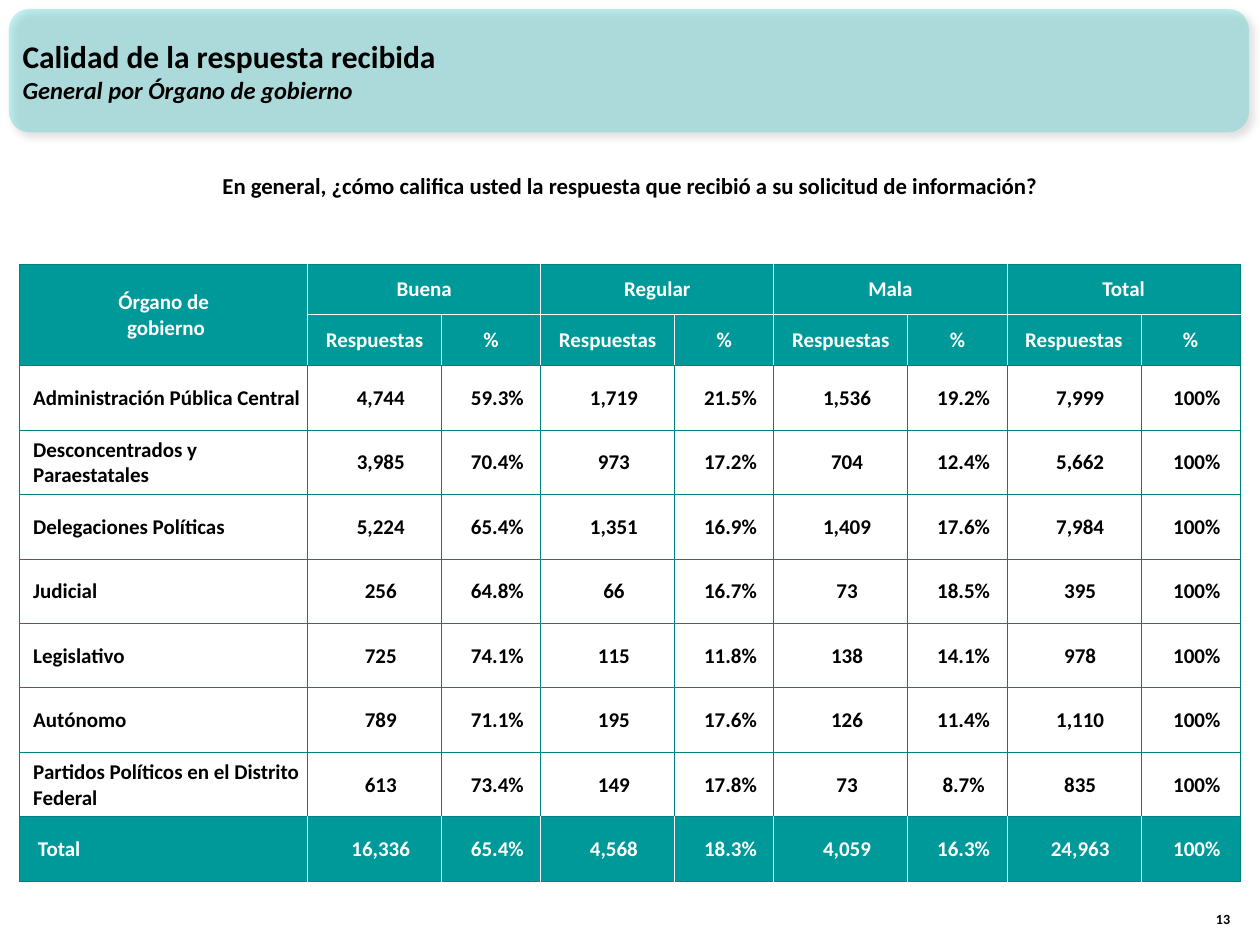
from lxml import etree
from pptx import Presentation
from pptx import util as u
from pptx.dml.color import RGBColor
from pptx.enum import shapes, text
from pptx.oxml import ns, parse_xml

BLACK = RGBColor(0x00, 0x00, 0x00)
WHITE = RGBColor(0xFF, 0xFF, 0xFF)
AQUA = RGBColor(0x33, 0xCC, 0xCC)
TEAL = RGBColor(0x00, 0x99, 0x99)
DARK_TEAL = RGBColor(0x00, 0x80, 0x80)

FONT = "Calibri"
LEFT, CENTER, RIGHT = text.PP_ALIGN.LEFT, text.PP_ALIGN.CENTER, text.PP_ALIGN.RIGHT
MIDDLE, BOTTOM = text.MSO_ANCHOR.MIDDLE, text.MSO_ANCHOR.BOTTOM

TITLE = "Calidad de la respuesta recibida"
SUBTITLE = "General por Órgano de gobierno"
QUESTION = "En general, ¿cómo califica usted la respuesta que recibió a su solicitud de información?"

RATINGS = ["Buena", "Regular", "Mala", "Total"]
ROWS = [
    ["Administración Pública Central", "4,744", "59.3%", "1,719", "21.5%", "1,536", "19.2%", "7,999", "100%"],
    ["Desconcentrados y Paraestatales", "3,985", "70.4%", "973", "17.2%", "704", "12.4%", "5,662", "100%"],
    ["Delegaciones Políticas", "5,224", "65.4%", "1,351", "16.9%", "1,409", "17.6%", "7,984", "100%"],
    ["Judicial", "256", "64.8%", "66", "16.7%", "73", "18.5%", "395", "100%"],
    ["Legislativo", "725", "74.1%", "115", "11.8%", "138", "14.1%", "978", "100%"],
    ["Autónomo", "789", "71.1%", "195", "17.6%", "126", "11.4%", "1,110", "100%"],
    ["Partidos Políticos en el Distrito Federal", "613", "73.4%", "149", "17.8%", "73", "8.7%", "835", "100%"],
    [" Total", "16,336", "65.4%", "4,568", "18.3%", "4,059", "16.3%", "24,963", "100%"],
]
HEADER_ROWS = 2
COLUMN_WIDTHS = [5.8] + [2.7, 2.0] * len(RATINGS)
ROW_HEIGHTS = [1.0, 1.03] + [1.3] * len(ROWS)


def write_paragraph(paragraph, content, size, color=BLACK, align=LEFT, italic=False, indent=0):
    paragraph.alignment = align
    if indent:
        paragraph._p.get_or_add_pPr().set("marL", str(u.Cm(indent)))
    run = paragraph.add_run()
    run.text = content
    font = run.font
    font.name, font.size, font.bold, font.italic = FONT, u.Pt(size), True, italic
    font.color.rgb = color


def add_band(slide):
    band = slide.shapes.add_shape(
        shapes.MSO_SHAPE.ROUNDED_RECTANGLE, u.Cm(0.18), u.Cm(0.18), u.Cm(25), u.Cm(2.49))
    band.fill.solid()
    band.fill.fore_color.rgb = AQUA
    band.line.fill.background()
    color = band._element.spPr.find(".//" + ns.qn("a:srgbClr"))
    etree.SubElement(color, ns.qn("a:alpha"), val="30000")
    band._element.spPr.append(parse_xml(
        f'<a:effectLst {ns.nsdecls("a")}><a:outerShdw blurRad="{u.Pt(4)}" dist="{u.Pt(3)}" '
        f'dir="2700000" algn="tl" rotWithShape="0"><a:srgbClr val="{BLACK}">'
        '<a:alpha val="40000"/></a:srgbClr></a:outerShdw></a:effectLst>'))
    slide.shapes.title._element.addprevious(band._element)


def fill_title(slide):
    title = slide.shapes.title
    title.left, title.top, title.width, title.height = u.Cm(0.2), u.Cm(0.23), u.Cm(23.3), u.Cm(2.38)
    frame = title.text_frame
    frame.auto_size = text.MSO_AUTO_SIZE.NONE
    frame.vertical_anchor = MIDDLE
    write_paragraph(frame.paragraphs[0], TITLE, 18)
    write_paragraph(frame.add_paragraph(), SUBTITLE, 14, italic=True)


def add_label(slide, content, left, top, width, height, anchor=MIDDLE, **style):
    box = slide.shapes.add_textbox(u.Cm(left), u.Cm(top), u.Cm(width), u.Cm(height))
    box.text_frame.word_wrap = True
    box.text_frame.vertical_anchor = anchor
    write_paragraph(box.text_frame.paragraphs[0], content, **style)


def set_border(cell, side, color):
    cell._tc.get_or_add_tcPr().append(parse_xml(
        f'<a:ln{side} {ns.nsdecls("a")} w="{u.Pt(0.5)}"><a:solidFill>'
        f'<a:srgbClr val="{color}"/></a:solidFill></a:ln{side}>'))


def style_cell(cell, row, column):
    filled = row < HEADER_ROWS or row == len(ROW_HEIGHTS) - 1
    last_column = column + cell.span_width
    last_row = row + cell.span_height
    inner_edges = {
        "L": filled and column > 0,
        "R": filled and last_column < len(COLUMN_WIDTHS),
        "T": 0 < row < HEADER_ROWS,
        "B": last_row < HEADER_ROWS,
    }
    for side, inner in inner_edges.items():
        set_border(cell, side, WHITE if inner else DARK_TEAL)
    if filled:
        cell.fill.solid()
        cell.fill.fore_color.rgb = TEAL
    else:
        cell.fill.background()
    cell.vertical_anchor = MIDDLE
    cell.margin_left = cell.margin_top = cell.margin_right = u.Cm(0.02)
    cell.margin_bottom = 0


def write_cell(cell, lines, **style):
    frame = cell.text_frame
    for index, line in enumerate(lines):
        paragraph = frame.add_paragraph() if index else frame.paragraphs[0]
        write_paragraph(paragraph, line, 12, **style)


def add_ratings_table(slide):
    table = slide.shapes.add_table(
        len(ROW_HEIGHTS), len(COLUMN_WIDTHS), u.Cm(0.4), u.Cm(5.33),
        u.Cm(sum(COLUMN_WIDTHS)), u.Cm(sum(ROW_HEIGHTS))).table
    table.first_row = table.horz_banding = False
    for column, width in zip(table.columns, COLUMN_WIDTHS):
        column.width = u.Cm(width)
    for row, height in zip(table.rows, ROW_HEIGHTS):
        row.height = u.Cm(height)

    table.cell(0, 0).merge(table.cell(1, 0))
    for column in range(1, len(COLUMN_WIDTHS), 2):
        table.cell(0, column).merge(table.cell(0, column + 1))
    for row in range(len(ROW_HEIGHTS)):
        for column in range(len(COLUMN_WIDTHS)):
            style_cell(table.cell(row, column), row, column)

    header = {"color": WHITE, "align": CENTER}
    write_cell(table.cell(0, 0), ["Órgano de", " gobierno"], **header)
    for index, rating in enumerate(RATINGS):
        column = 1 + 2 * index
        write_cell(table.cell(0, column), [rating], **header)
        write_cell(table.cell(1, column), ["Respuestas"], **header)
        write_cell(table.cell(1, column + 1), ["%"], **header)
    for row, values in enumerate(ROWS, HEADER_ROWS):
        color = WHITE if row == len(ROW_HEIGHTS) - 1 else BLACK
        for column, value in enumerate(values):
            write_cell(table.cell(row, column), [value], color=color,
                       align=CENTER if column else LEFT, indent=0.25)


def main():
    presentation = Presentation()
    presentation.slide_width, presentation.slide_height = u.Cm(25.4), u.Cm(19.05)
    slide = presentation.slides.add_slide(presentation.slide_layouts[5])
    add_band(slide)
    fill_title(slide)
    add_label(slide, "13", 24.03, 17.8, 1.02, 1.02, anchor=BOTTOM, size=8, align=RIGHT)
    add_label(slide, QUESTION, 2.26, 3.33, 20.85, 0.81, size=13, align=CENTER)
    add_ratings_table(slide)
    presentation.save("out.pptx")


if __name__ == "__main__":
    main()
